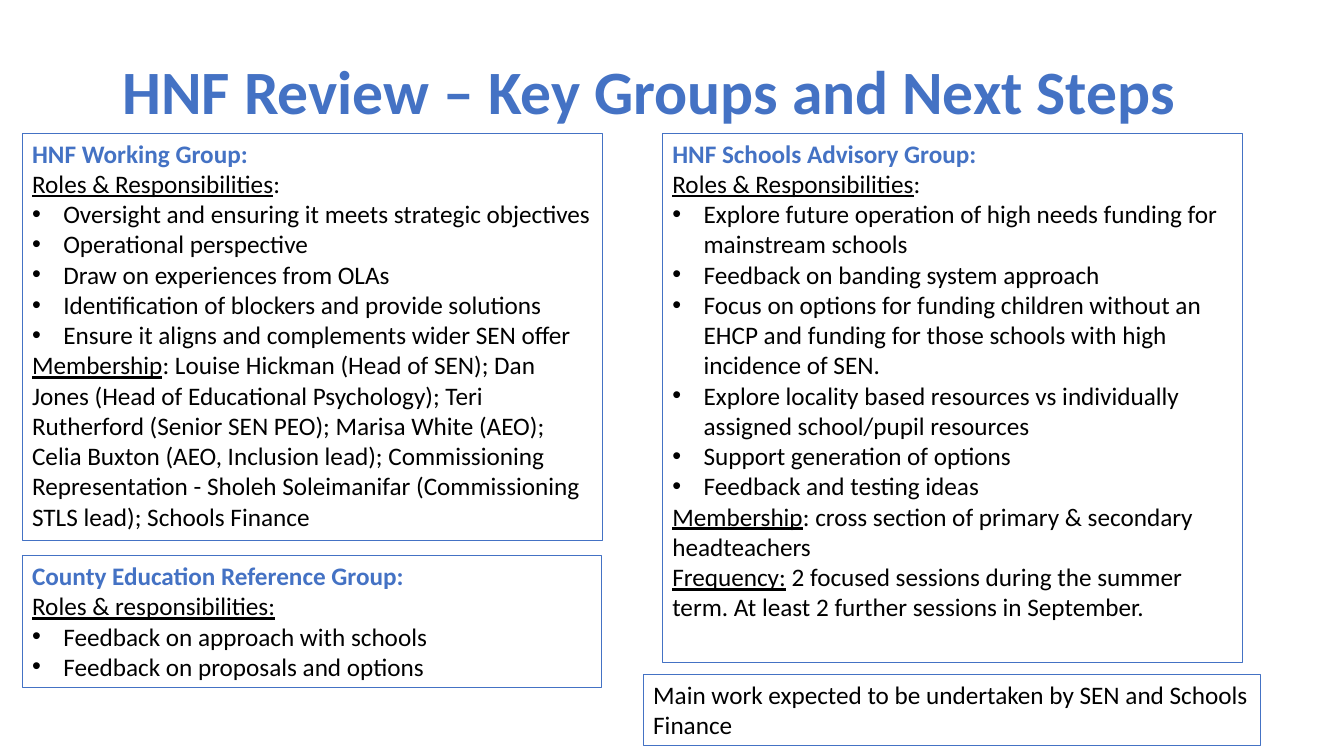
from pptx import Presentation, util as u
from pptx.dml import color
from pptx.enum import shapes, text
from pptx.oxml import parse_xml
from pptx.oxml.ns import nsdecls

BLUE = "4472C4"
BLACK = "000000"
INDENT = u.Inches(0.31)

WORKING_GROUP = [
    ("heading", "HNF Working Group:"),
    ("label", "Roles & Responsibilities", ":"),
    ("bullet", "Oversight and ensuring it meets strategic objectives"),
    ("bullet", "Operational perspective"),
    ("bullet", "Draw on experiences from OLAs"),
    ("bullet", "Identification of blockers and provide solutions"),
    ("bullet", "Ensure it aligns and complements wider SEN offer"),
    ("label", "Membership",
     ": Louise Hickman (Head of SEN); Dan Jones (Head of Educational Psychology); "
     "Teri Rutherford (Senior SEN PEO); Marisa White (AEO); "
     "Celia Buxton (AEO, Inclusion lead); Commissioning Representation - "
     "Sholeh Soleimanifar (Commissioning STLS lead); Schools Finance"),
]
ADVISORY_GROUP = [
    ("heading", "HNF Schools Advisory Group:"),
    ("label", "Roles & Responsibilities", ":"),
    ("bullet", "Explore future operation of high needs funding for mainstream schools"),
    ("bullet", "Feedback on banding system approach"),
    ("bullet", "Focus on options for funding children without an EHCP and funding "
               "for those schools with high incidence of SEN."),
    ("bullet", "Explore locality based resources vs individually assigned "
               "school/pupil resources"),
    ("bullet", "Support generation of options"),
    ("bullet", "Feedback and testing ideas"),
    ("label", "Membership", ": cross section of primary & secondary headteachers"),
    ("label", "Frequency:", " 2 focused sessions during the summer term. "
                            "At least 2 further sessions in September."),
]
REFERENCE_GROUP = [
    ("heading", "County Education Reference Group:"),
    ("label", "Roles & responsibilities:"),
    ("bullet", "Feedback on approach with schools"),
    ("bullet", "Feedback on proposals and options"),
]
CLOSING_NOTE = [("plain", "Main work expected to be undertaken by SEN and Schools Finance")]

GROUP_BOXES = [
    ((0.22, 1.32, 5.76, 4.04), WORKING_GROUP),
    ((6.57, 1.32, 5.75, 5.25), ADVISORY_GROUP),
    ((0.22, 5.51, 5.75, 1.31), REFERENCE_GROUP),
    ((6.38, 6.69, 6.12, 0.71), CLOSING_NOTE),
]


def rgb(value):
    return color.RGBColor.from_string(value)


def apply(target, values):
    for name, value in values.items():
        setattr(target, name, value)


def add_run(paragraph, words, hex_color=BLACK, size=18, **font_values):
    run = paragraph.add_run()
    run.text = words
    apply(run.font, {"name": "Calibri", "size": u.Pt(size), **font_values})
    run.font.color.rgb = rgb(hex_color)


def add_bullet(paragraph):
    properties = paragraph._p.get_or_add_pPr()
    properties.set("marL", str(INDENT))
    properties.set("indent", str(-INDENT))
    for tag in ('a:buFont {} typeface="Arial"', 'a:buChar {} char="•"'):
        properties.append(parse_xml(f"<{tag.format(nsdecls('a'))}/>"))


def fill_paragraph(paragraph, kind, lead, *rest):
    paragraph.alignment = text.PP_ALIGN.LEFT
    if kind == "bullet":
        add_bullet(paragraph)
    if kind == "heading":
        add_run(paragraph, lead, BLUE, bold=True)
    else:
        add_run(paragraph, lead, underline=kind == "label")
    for words in rest:
        add_run(paragraph, words)


def add_title(slide, words):
    title = slide.shapes.title
    apply(title, {"left": u.Inches(0.69), "top": u.Inches(0.21),
                  "width": u.Inches(11.5), "height": u.Inches(1.45)})
    apply(title.text_frame, {"vertical_anchor": text.MSO_ANCHOR.MIDDLE,
                             "auto_size": text.MSO_AUTO_SIZE.NONE})
    paragraph = title.text_frame.paragraphs[0]
    apply(paragraph, {"alignment": text.PP_ALIGN.CENTER, "line_spacing": 0.9})
    add_run(paragraph, words, BLUE, 44, bold=True)


def add_group_box(slide, bounds, lines):
    box = slide.shapes.add_shape(shapes.MSO_SHAPE.RECTANGLE, *map(u.Inches, bounds))
    box.shadow.inherit = False
    box.fill.background()
    box.line.color.rgb = rgb(BLUE)
    box.line.width = u.Pt(0.75)
    frame = box.text_frame
    apply(frame, {"word_wrap": True, "vertical_anchor": text.MSO_ANCHOR.TOP,
                  "auto_size": text.MSO_AUTO_SIZE.NONE})
    for index, line in enumerate(lines):
        paragraph = frame.add_paragraph() if index else frame.paragraphs[0]
        fill_paragraph(paragraph, *line)


def main():
    presentation = Presentation()
    apply(presentation, {"slide_width": u.Inches(13.33), "slide_height": u.Inches(7.5)})
    slide = presentation.slides.add_slide(presentation.slide_layouts.get_by_name("Title Only"))
    add_title(slide, "HNF Review – Key Groups and Next Steps")
    for bounds, lines in GROUP_BOXES:
        add_group_box(slide, bounds, lines)
    presentation.save("out.pptx")


if __name__ == "__main__":
    main()
